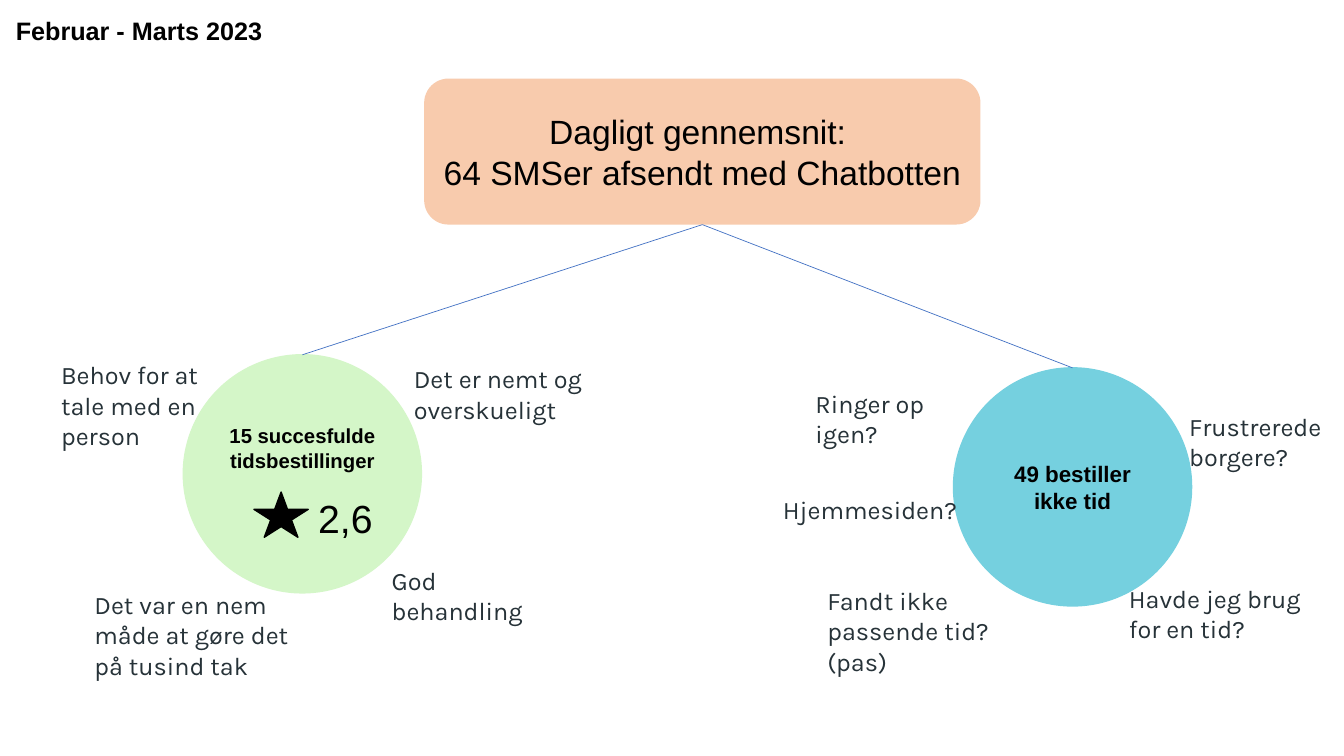
from lxml.etree import SubElement
from pptx import Presentation
from pptx.dml.color import RGBColor
from pptx.enum.shapes import MSO_CONNECTOR, MSO_SHAPE
from pptx.enum.text import MSO_ANCHOR, PP_ALIGN
from pptx.oxml.ns import qn
from pptx.util import Cm, Pt

HUES = {
    "black": "000000",
    "slate": "263238",
    "peach": "F8CBAD",
    "green": "D4F6C8",
    "teal": "75D0DF",
    "blue": "4472C4",
}
DISC = 6.0  # circle diameter in cm
LINE = 1.02  # height of a one-line text box in cm


def hue(name):
    return RGBColor.from_string(HUES[name])


def style(frame, text, size, font="Arial", color="black", bold=False, align=PP_ALIGN.LEFT):
    frame.word_wrap = True
    frame.text = text
    for para in frame.paragraphs:
        para.alignment = align
        for run in para.runs:
            run.font.name = font
            run.font.size = Pt(size)
            run.font.bold = bold
            run.font.color.rgb = hue(color)


def label(slide, box, text, size, **look):
    area = slide.shapes.add_textbox(*map(Cm, box))
    style(area.text_frame, text, size, **look)


def shape(slide, kind, box, color, edge=True):
    item = slide.shapes.add_shape(kind, *map(Cm, box))
    item.shadow.inherit = False
    item.fill.solid()
    item.fill.fore_color.rgb = hue(color)
    if edge:
        item.line.color.rgb = hue(color)
        item.line.width = Pt(1)
    else:
        item.line.fill.background()
    return item


def banner(slide, box, text):
    item = shape(slide, MSO_SHAPE.ROUNDED_RECTANGLE, box, "peach", edge=False)
    item.text_frame.vertical_anchor = MSO_ANCHOR.MIDDLE
    style(item.text_frame, text, 24, align=PP_ALIGN.CENTER)
    return item


def group(slide, left, top, color, text, size, notes, lift=0):
    """Draw a circle with notes around it; lift is space kept free below its text."""
    disc = shape(slide, MSO_SHAPE.OVAL, (left, top, DISC, DISC), color)
    frame = disc.text_frame
    frame.vertical_anchor = MSO_ANCHOR.MIDDLE
    frame.margin_bottom += Cm(lift)
    style(frame, text, size, bold=True, align=PP_ALIGN.CENTER)
    for right, down, width, note in notes:
        label(slide, (left + right, top + down, width, LINE), note, 18,
              font="Karla", color="slate")
    return disc


def score(slide, left, top, value):
    shape(slide, MSO_SHAPE.STAR_5_POINT, (left, top, 1.37, 1.14), "black")
    label(slide, (left + 1.37, top - 0.08, 2.18, 1.45), value, 28)


def link(slide, head, disc):
    """Join the bottom of the banner to the top of a circle."""
    line = slide.shapes.add_connector(MSO_CONNECTOR.STRAIGHT, 0, 0, 0, 0)
    line.begin_connect(head, 2)
    line.end_connect(disc, 0)
    line.line.color.rgb = hue("blue")
    line.line.width = Pt(0.5)
    SubElement(line._element.spPr, qn("a:effectLst"))


def main():
    deck = Presentation()
    deck.slide_width, deck.slide_height = Cm(33.87), Cm(19.05)
    slide = deck.slides.add_slide(deck.slide_layouts[6])

    label(slide, (0.15, 0.25, 7.7, LINE), "Februar - Marts 2023", 18, bold=True)
    head = banner(slide, (10.69, 1.98, 14.02, 3.68),
                  "Dagligt gennemsnit: \n64 SMSer afsendt med Chatbotten")

    booked = group(slide, 4.62, 8.94, "green", "15 succesfulde tidsbestillinger", 14.5, [
        (-3.33, 0, 5.1, "Behov for at tale med en person"),
        (5.56, 0.1, 5.1, "Det er nemt og overskueligt"),
        (5, 5.18, 5, "God behandling"),
        (-2.49, 5.79, 5.46, "Det var en nem måde at gøre det på tusind tak"),
    ], lift=1.3)
    score(slide, 6.4, 12.4, "2,6")

    missed = group(slide, 24.03, 9.27, "teal", "49 bestiller ikke tid", 16, [
        (-3.73, 0.38, 4.8, "Ringer op igen?"),
        (5.69, 0.97, 4.06, "Frustrerede borgere?"),
        (-4.55, 3.05, 5.26, "Hjemmesiden?"),
        (4.17, 5.31, 5.26, "Havde jeg brug for en tid?"),
        (-3.43, 5.36, 6.1, "Fandt ikke passende tid? (pas)"),
    ])

    for disc in (booked, missed):
        link(slide, head, disc)
    deck.save("out.pptx")


if __name__ == "__main__":
    main()
